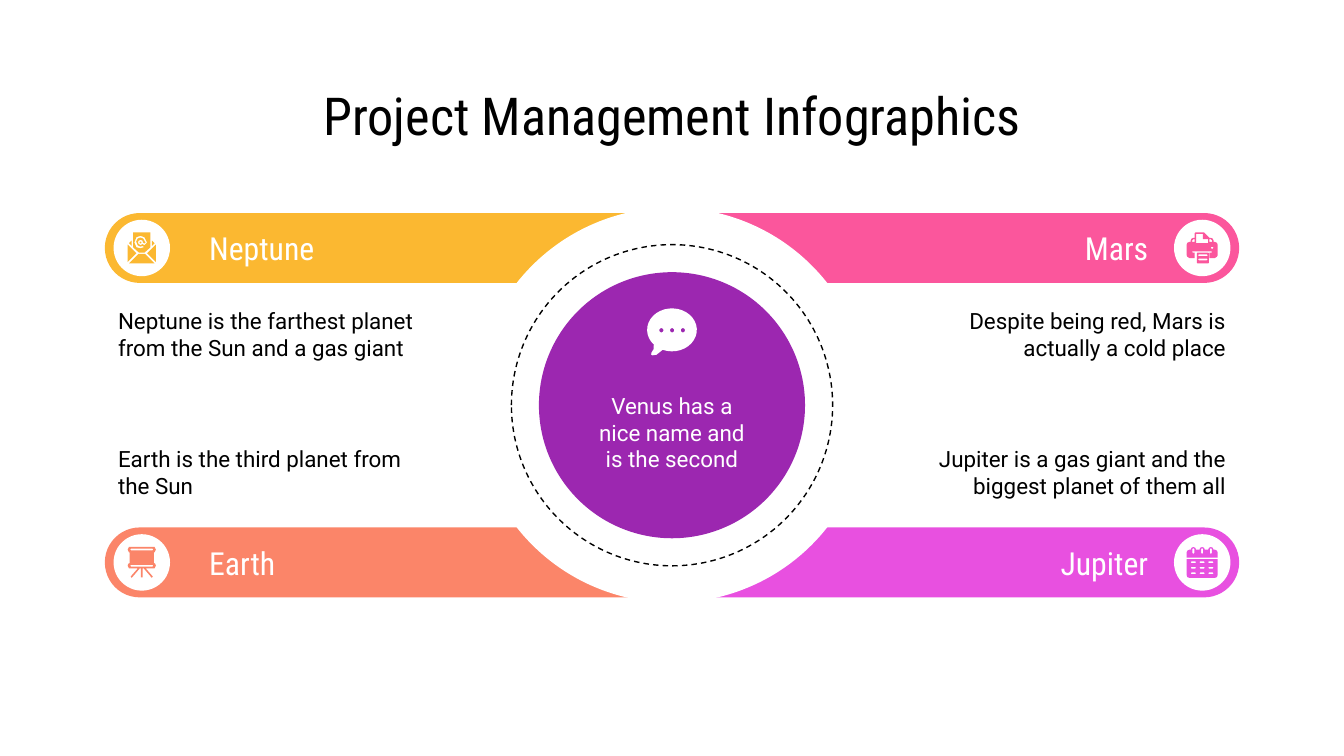
from collections import namedtuple
from dataclasses import dataclass
from math import cos, radians, sin

from pptx import Presentation
from pptx.dml.color import RGBColor
from pptx.enum.dml import MSO_LINE
from pptx.enum.shapes import MSO_SHAPE
from pptx.enum.text import MSO_ANCHOR, MSO_AUTO_SIZE, PP_ALIGN
from pptx.util import Inches, Pt


@dataclass(frozen=True)
class Theme:
    ink: str = "000000"
    paper: str = "FFFFFF"
    neptune: str = "FBB831"
    earth: str = "FB8569"
    mars: str = "FB569C"
    jupiter: str = "E850E0"
    venus: str = "9C27B0"
    heading_font: str = "Roboto Condensed"
    body_font: str = "Roboto"
    title_size: float = 28
    label_size: float = 17
    body_size: float = 12


THEME = Theme()
COLUMNS, ROWS = 100, 56.25
MIDDLE_COLUMN, MIDDLE_ROW = COLUMNS / 2, 30.15
BAR_WIDTH, BAR_HEIGHT, BAR_DISTANCE = 42.2, 5.2, 11.7
BADGE_DISTANCE, BADGE_SIZE = 39.45, 4.2
NOTE_WIDTH, NOTE_HEIGHT = 24.8, 5.8
ICON_SIZE = 23

Topic = namedtuple("Topic", "name note color side level note_row icon")


def grid(cells):
    return Inches(cells * 0.1)


def paint(shape, fill):
    shape.shadow.inherit = False
    shape.line.fill.background()
    if fill:
        shape.fill.solid()
        shape.fill.fore_color.rgb = RGBColor.from_string(fill)
    else:
        shape.fill.background()


def add_block(page, kind, left, top, width, height, fill):
    shape = page.shapes.add_shape(kind, grid(left), grid(top), grid(width), grid(height))
    paint(shape, fill)
    return shape


def add_disc(page, column, row, size, fill):
    return add_block(page, MSO_SHAPE.OVAL, column - size / 2, row - size / 2, size, size, fill)


def write(box, text, font, size, color, align, left=1, top=1, right=1):
    frame = box.text_frame
    frame.word_wrap = True
    frame.auto_size = MSO_AUTO_SIZE.NONE
    frame.vertical_anchor = MSO_ANCHOR.MIDDLE
    frame.margin_left, frame.margin_top = grid(left), grid(top)
    frame.margin_right, frame.margin_bottom = grid(right), grid(1)
    para = frame.paragraphs[0]
    para.alignment = align
    span = para.add_run()
    span.text = text
    span.font.name, span.font.size = font, Pt(size)
    span.font.color.rgb = RGBColor.from_string(color)


def arc(left, top, width, height, start=0, sweep=360, steps=10):
    angles = [radians(start + sweep * step / steps) for step in range(steps + 1)]
    return [(left + width * (1 + cos(angle)) / 2, top + height * (1 + sin(angle)) / 2)
            for angle in angles]


def slot(left, top, width, height, cut=0.5):
    right, bottom = left + width, top + height
    return [(left + cut, top), (right - cut, top), (right, top + cut), (right, bottom - cut),
            (right - cut, bottom), (left + cut, bottom), (left, bottom - cut), (left, top + cut)]


def mirror(points):
    return [(ICON_SIZE - x, y) for x, y in reversed(points)]


class Icon:
    def __init__(self, page, column, row, color, width=ICON_SIZE, height=ICON_SIZE):
        self.page, self.color = page, color
        self.left, self.top = column - width / 20, row - height / 20

    def place(self, point):
        return grid(self.left + point[0] / 10), grid(self.top + point[1] / 10)

    def outline(self, *contours):
        first = self.place(contours[0][0])
        builder = self.page.shapes.build_freeform(*first, scale=1.0)
        for contour in contours:
            corners = [self.place(point) for point in contour]
            if contour is not contours[0]:
                builder.move_to(*corners[0])
            builder.add_line_segments(corners[1:], close=True)
        paint(builder.convert_to_shape(), self.color)


def draw_envelope(icon):
    for flap in ([(1, 9), (7.5, 15.5), (1, 22)], [(4, 6), (2, 8), (4, 10)]):
        icon.outline(flap)
        icon.outline(mirror(flap))
    fold, letter = [(2, 23), (9, 16)], [(9.5, 15), (5, 11), (5, 0)]
    at_sign = [(10.5, 2.5), (13.5, 3.5), (15.5, 7.5), (13.5, 9.5), (12, 8.7), (10.5, 9.5),
               (8.7, 8), (9, 6.3), (10.5, 5.5), (12, 6), (12.5, 7.5), (13.5, 8.2),
               (14.3, 7.5), (12.5, 4.5), (10.5, 3.8), (8.5, 4.5), (7.4, 6.8), (8.5, 9.5),
               (10.5, 10.5), (12.5, 10), (13, 11), (10.5, 11.8), (7.5, 11), (6, 7.5), (7.5, 3.5)]
    icon.outline(fold + mirror(fold))
    icon.outline(letter + mirror(letter), at_sign)
    icon.outline(arc(9.9, 6.7, 1.4, 1.6, steps=6))


def draw_board(icon):
    half = [(2, 0), (1, 2), (2, 4), (2.5, 4), (2.5, 12), (1.5, 12.5), (1, 14), (2, 16),
            (8.5, 16), (3.3, 22), (4, 23), (10, 16), (10.8, 16), (10.8, 22.7)]
    icon.outline(half + mirror(half), slot(3, 1.3, 17, 1.2), slot(3, 13.4, 17, 1.2))


def draw_printer(icon):
    icon.outline(slot(7.5, 15, 9, 8), slot(8.5, 16.3, 7, 1.3), slot(8.5, 19.4, 7, 1.3))
    left_side = [(4.5, 14), (4, 14.5), (4.5, 15), (6, 15), (6, 19), (2, 19), (0.5, 18),
                 (0, 17), (0, 9), (0.5, 7.7), (2, 7), (3, 7), (3, 6), (3.6, 4.6), (5, 4), (6, 4)]
    paper_top = [(6, 0.5), (6.5, 0), (13, 0), (17, 4)]
    side_hole = [(4, 7), (4, 6), (5, 5), (6, 5), (6, 7)]
    icon.outline(left_side + paper_top + mirror(left_side),
                 [(7, 1), (12, 1), (12, 4.5), (12.5, 5), (16, 5), (16, 8), (7, 8)],
                 side_hole, mirror(side_hole), slot(18, 10.7, 2, 1.3))


def draw_calendar(icon):
    lefts = (3, 9.5, 16)
    days = [slot(left, top, 4, 1.2) for top in (10.8, 14.9, 19) for left in lefts]
    icon.outline([(0, 9), (23, 9), (23, 21), (22.5, 22.5), (21, 23),
                  (2, 23), (0.5, 22.5), (0, 21)], *days)
    edge = [(0, 8), (0, 4), (0.5, 2.7), (2, 2)]
    rings = [point for left in lefts for point in
             ((left, 2), (left + 0.6, 0.6), (left + 2, 0), (left + 3.4, 0.6), (left + 4, 2))]
    icon.outline(edge + rings + mirror(edge), *[slot(left + 1.2, 1, 1.6, 4) for left in lefts])


def draw_bubble(icon):
    tail = [(7, 34.5), (4, 35), (3, 34.3), (3.2, 33), (4.8, 30.5)]
    dots = [arc(left, 14.7, 3.2, 3.2) for left in (9, 17, 25)]
    icon.outline(arc(0, 0, 37, 32, 137, 335, 32) + tail, *dots)


def add_topic(page, topic):
    row = MIDDLE_ROW + topic.level * BAR_DISTANCE
    on_left = topic.side < 0
    align = PP_ALIGN.LEFT if on_left else PP_ALIGN.RIGHT
    bar_left = MIDDLE_COLUMN - BAR_WIDTH if on_left else MIDDLE_COLUMN
    note_left = bar_left if on_left else bar_left + BAR_WIDTH - NOTE_WIDTH
    insets = {"left": 7} if on_left else {"right": 6}

    bar = add_block(page, MSO_SHAPE.ROUNDED_RECTANGLE, bar_left, row - BAR_HEIGHT / 2,
                    BAR_WIDTH, BAR_HEIGHT, topic.color)
    bar.adjustments[0] = 0.5
    write(bar, topic.name, THEME.heading_font, THEME.label_size, THEME.paper, align, **insets)
    note = page.shapes.add_textbox(grid(note_left), grid(topic.note_row),
                                   grid(NOTE_WIDTH), grid(NOTE_HEIGHT))
    write(note, topic.note, THEME.body_font, THEME.body_size, THEME.ink, align)
    column = MIDDLE_COLUMN + topic.side * BADGE_DISTANCE
    add_disc(page, column, row, BADGE_SIZE, THEME.paper)
    topic.icon(Icon(page, column, row, topic.color))


def add_hub(page):
    add_disc(page, MIDDLE_COLUMN, MIDDLE_ROW, 29.4, THEME.paper)
    ring = add_disc(page, MIDDLE_COLUMN, MIDDLE_ROW, 23.9, None)
    ring.line.color.rgb = RGBColor.from_string(THEME.ink)
    ring.line.width = Pt(0.75)
    ring.line.dash_style = MSO_LINE.DASH
    core = add_disc(page, MIDDLE_COLUMN, MIDDLE_ROW, 19.8, THEME.venus)
    write(core, "Venus has a nice name and is the second", THEME.body_font,
          THEME.body_size, THEME.paper, PP_ALIGN.CENTER, top=5)
    draw_bubble(Icon(page, MIDDLE_COLUMN, 24.7, THEME.paper, 37, 35))


def add_title(page):
    title = page.shapes.title
    title.left, title.top = grid(7.75), grid(5.9)
    title.width, title.height = grid(84.5), grid(5.3)
    write(title, "Project Management Infographics", THEME.heading_font,
          THEME.title_size, THEME.ink, PP_ALIGN.CENTER)


def main():
    deck = Presentation()
    deck.slide_width, deck.slide_height = grid(COLUMNS), grid(ROWS)
    page = deck.slides.add_slide(deck.slide_layouts[5])
    add_title(page)
    for topic in (
        Topic("Neptune", "Neptune is the farthest planet from the Sun and a gas giant",
              THEME.neptune, -1, -1, 21.95, draw_envelope),
        Topic("Earth", "Earth is the third planet from the Sun",
              THEME.earth, -1, 1, 32.2, draw_board),
        Topic("Mars", "Despite being red, Mars is actually a cold place",
              THEME.mars, 1, -1, 21.95, draw_printer),
        Topic("Jupiter", "Jupiter is a gas giant and the biggest planet of them all",
              THEME.jupiter, 1, 1, 32.2, draw_calendar),
    ):
        add_topic(page, topic)
    add_hub(page)
    deck.save("out.pptx")


if __name__ == "__main__":
    main()
